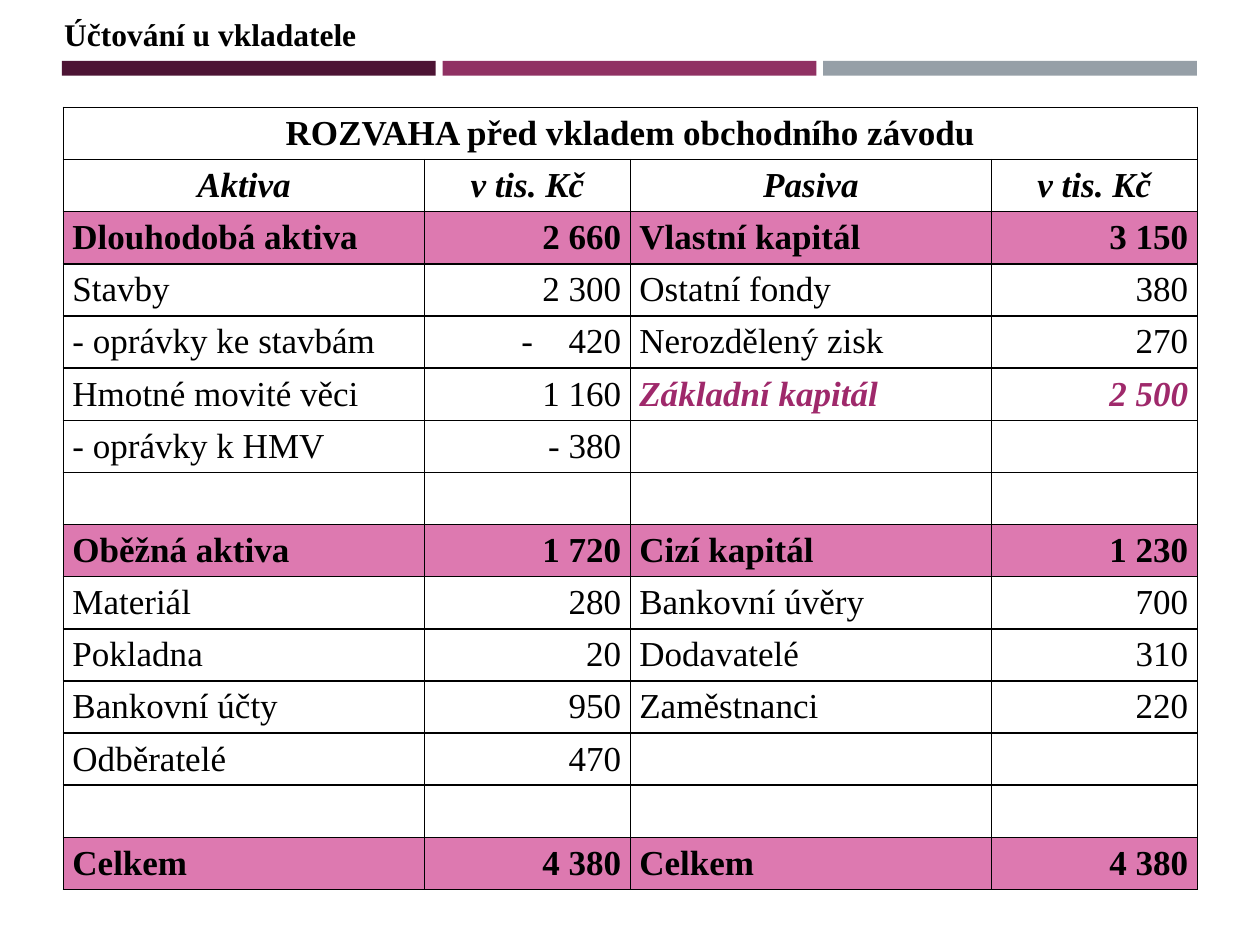
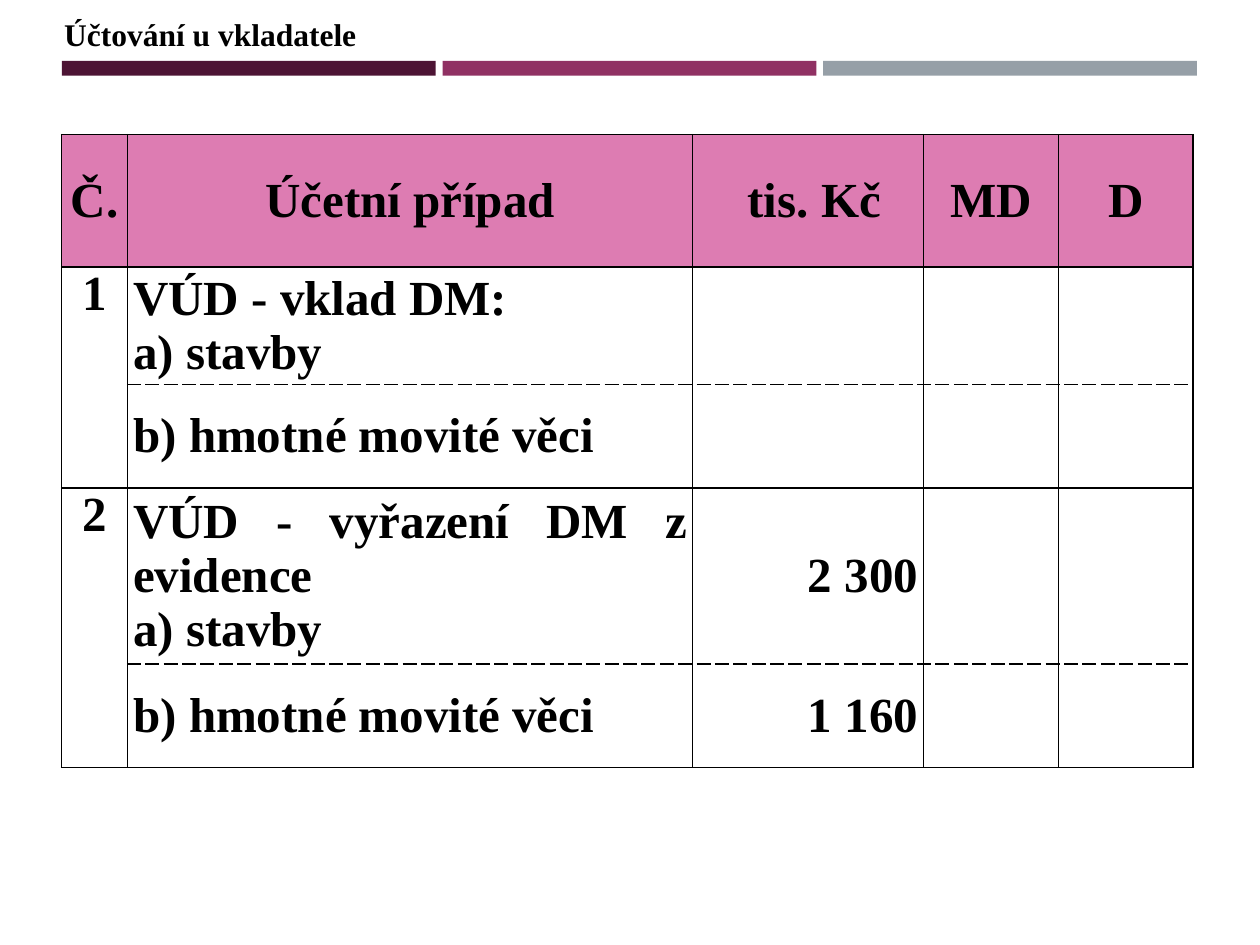
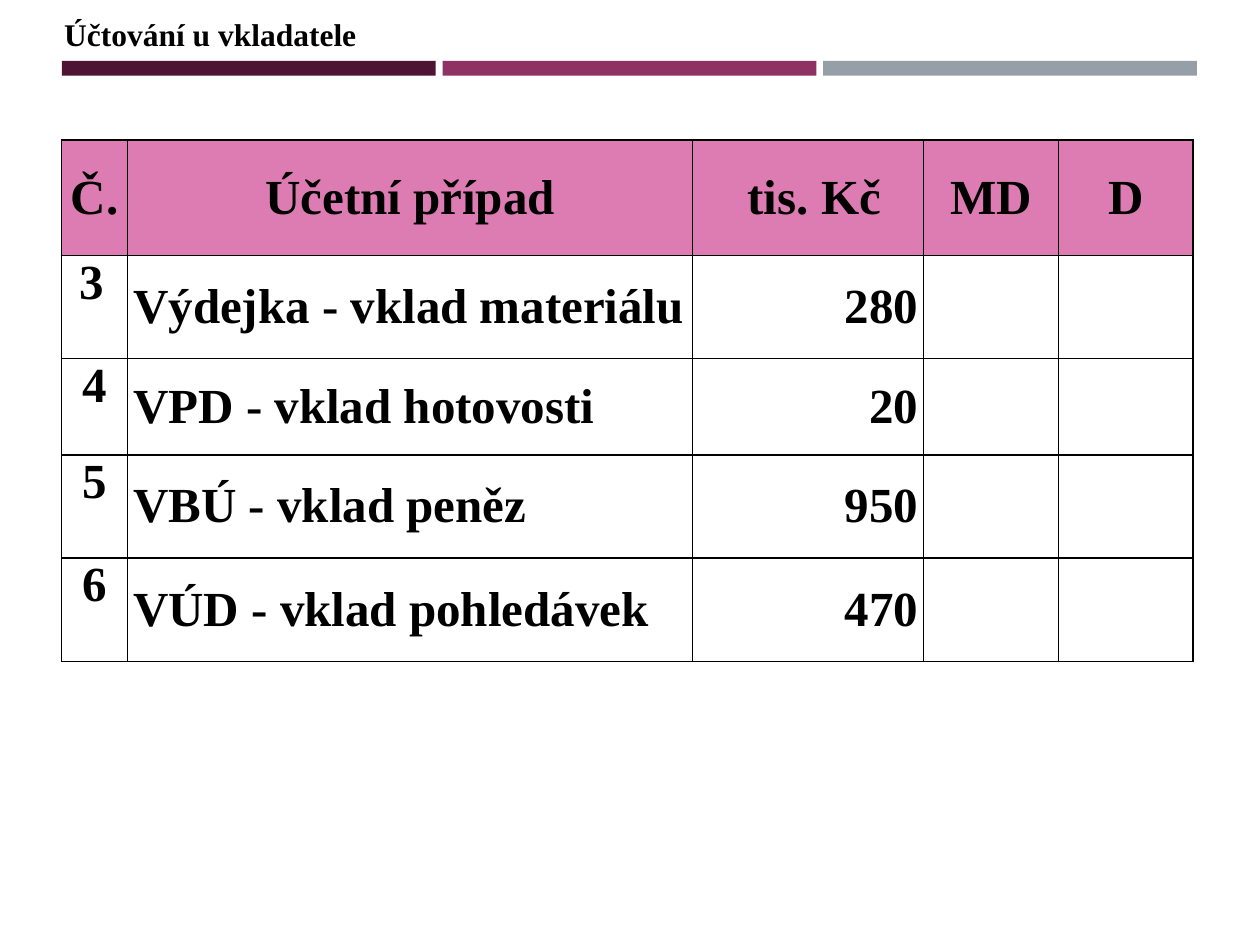
"""Build three accounting slides: a balance sheet and two journal tables."""
from lxml import etree
from pptx import Presentation
from pptx.dml.color import RGBColor
from pptx.enum import text
from pptx.oxml.ns import qn
from pptx.util import Pt

FONT = "Times New Roman"
BLACK = RGBColor(0x00, 0x00, 0x00)
PLUM = RGBColor(0x4D, 0x14, 0x34)
BERRY = RGBColor(0x90, 0x31, 0x63)
GREY = RGBColor(0x96, 0x9F, 0xA7)
PINK = RGBColor(0xDD, 0x79, 0xB0)
HEAD_PINK = RGBColor(0xDD, 0x7C, 0xB2)
ACCENT = RGBColor(0x9F, 0x29, 0x6B)
LEFT, CENTER, RIGHT, JUSTIFY = (
    text.PP_ALIGN.LEFT, text.PP_ALIGN.CENTER, text.PP_ALIGN.RIGHT, text.PP_ALIGN.JUSTIFY)


def add_run(p, words, size, bold=True, italic=False, color=BLACK):
    r = p.add_run()
    r.text = words
    r.font.name = FONT
    r.font.size = Pt(size)
    r.font.bold = bold
    r.font.italic = italic
    r.font.color.rgb = color


def add_grid(s, left, top, widths, heights, inset, fills, dashed=()):
    tbl = s.shapes.add_table(len(heights), len(widths), Pt(left), Pt(top),
                             Pt(sum(widths)), Pt(sum(heights))).table
    tbl.first_row = tbl.horz_banding = False
    for col, width in zip(tbl.columns, widths):
        col.width = Pt(width)
    for i, height in enumerate(heights):
        tbl.rows[i].height = Pt(height)
        for j in range(len(widths)):
            cell = tbl.cell(i, j)
            cell.margin_left = cell.margin_right = Pt(inset)
            cell.margin_top = cell.margin_bottom = 0
            cell.vertical_anchor = text.MSO_ANCHOR.MIDDLE
            tcPr = cell._tc.get_or_add_tcPr()
            for side in "LRTB":
                ln = etree.SubElement(tcPr, qn("a:ln" + side), w=str(Pt(1)))
                fill = etree.SubElement(ln, qn("a:solidFill"))
                etree.SubElement(fill, qn("a:srgbClr"), val=str(BLACK))
                edge = i + 1 if side == "B" else i
                if side in "TB" and edge in dashed and j > 0:
                    etree.SubElement(ln, qn("a:prstDash"), val="dash")
            if i in fills:
                cell.fill.solid()
                cell.fill.fore_color.rgb = fills[i]
            else:
                cell.fill.background()
    return tbl


prs = Presentation()
prs.slide_width, prs.slide_height = Pt(720), Pt(540)
layout = prs.slide_layouts[5]
slides = [prs.slides.add_slide(layout) for _ in range(3)]

for i, color in enumerate((PLUM, BERRY, GREY)):
    sp = slides[0].shapes.add_shape(1, Pt(35.4 + 217.5 * i), Pt(34.8), Pt(213.6), Pt(8.4))
    sp.shadow.inherit = False
    sp.fill.solid()
    sp.fill.fore_color.rgb = color
    sp.line.fill.background()
    layout.shapes.element.append(sp.element)

for s in slides:
    title = s.shapes.title
    title.left, title.top, title.width, title.height = Pt(29.5), Pt(5), Pt(183), Pt(29)
    tf = title.text_frame
    tf.word_wrap = False
    tf.auto_size = text.MSO_AUTO_SIZE.NONE
    tf.vertical_anchor = text.MSO_ANCHOR.TOP
    p = tf.paragraphs[0]
    p.alignment = LEFT
    add_run(p, "Účtování u vkladatele", 18)

balance = [
    ("ROZVAHA před vkladem obchodního závodu", "", "", ""),
    ("Aktiva", "v tis. Kč", "Pasiva", "v tis. Kč"),
    ("Dlouhodobá aktiva", "2\u00a0660", "Vlastní kapitál", "3\u00a0150"),
    ("Stavby", "2\u00a0300", "Ostatní fondy", "380"),
    ("- oprávky ke stavbám", "420", "Nerozdělený zisk", "270"),
    ("Hmotné movité věci", "1 160", "Základní kapitál", "2\u00a0500"),
    ("- oprávky k HMV", "- 380", "", ""),
    ("", "", "", ""),
    ("Oběžná aktiva", "1 720", "Cizí kapitál", "1 230"),
    ("Materiál", "280", "Bankovní úvěry", "700"),
    ("Pokladna", "20", "Dodavatelé", "310"),
    ("Bankovní účty", "950", "Zaměstnanci", "220"),
    ("Odběratelé", "470", "", ""),
    ("", "", "", ""),
    ("Celkem", "4\u00a0380", "Celkem", "4\u00a0380"),
]
totals = {2: PINK, 8: PINK, 14: PINK}
tbl = add_grid(slides[0], 36.2, 61.4, [206.5, 117.5] * 2, [29.8] * len(balance), 5.2, totals)
tbl.cell(0, 0).merge(tbl.cell(0, 3))
for i, row in enumerate(balance):
    for j, words in enumerate(row):
        if not words:
            continue
        p = tbl.cell(i, j).text_frame.paragraphs[0]
        p.alignment = CENTER if i < 2 else (LEFT, RIGHT, JUSTIFY, RIGHT)[j]
        capital = i == 5 and j > 1
        add_run(p, words, 20, i < 2 or i in totals or capital, i == 1 or capital,
                ACCENT if capital else BLACK)
pPr = tbl.cell(4, 1).text_frame.paragraphs[0]._p.get_or_add_pPr()
pPr.set("marL", str(Pt(27)))
pPr.set("indent", str(Pt(-27)))
etree.SubElement(pPr, qn("a:buFont"), typeface=FONT)
etree.SubElement(pPr, qn("a:buChar"), char="-")

header = ("Č.", "Účetní případ", " tis. Kč", "MD", "D")
journals = [
    (slides[1], 77, [75.6, 67.2, 59, 100.8, 59], (2, 4), [
        ("1", "VÚD - vklad DM:\na) stavby", ""),
        ("", "b) hmotné movité věci", ""),
        ("2", "VÚD - vyřazení DM z evidence\na) stavby", "2 300"),
        ("", "b) hmotné movité věci", "1 160")]),
    (slides[2], 79.9, [66, 59, 55, 59, 59], (), [
        ("\u00a03", "Výdejka - vklad materiálu", "280"),
        ("4", "VPD - vklad hotovosti", "20"),
        ("5", "VBÚ - vklad peněz", "950"),
        ("6", "VÚD - vklad pohledávek", "470")]),
]
for s, top, heights, dashed, entries in journals:
    tbl = add_grid(s, 35.2, top, [37.8, 322.8, 132, 77, 77], heights, 3.2,
                   {0: HEAD_PINK}, dashed)
    for i in dashed:
        tbl.cell(i - 1, 0).merge(tbl.cell(i, 0))
    for i, row in enumerate([header] + entries):
        for j, words in enumerate(row):
            if not words:
                continue
            cell = tbl.cell(i, j)
            if i and j == 0:
                cell.vertical_anchor = text.MSO_ANCHOR.TOP
            for k, line in enumerate(words.split("\n")):
                tf = cell.text_frame
                p = tf.add_paragraph() if k else tf.paragraphs[0]
                p.alignment = (CENTER, JUSTIFY, RIGHT)[j] if i else CENTER
                if line.startswith("\u00a0"):
                    p.alignment = LEFT
                add_run(p, line, 28)

prs.save("out.pptx")
